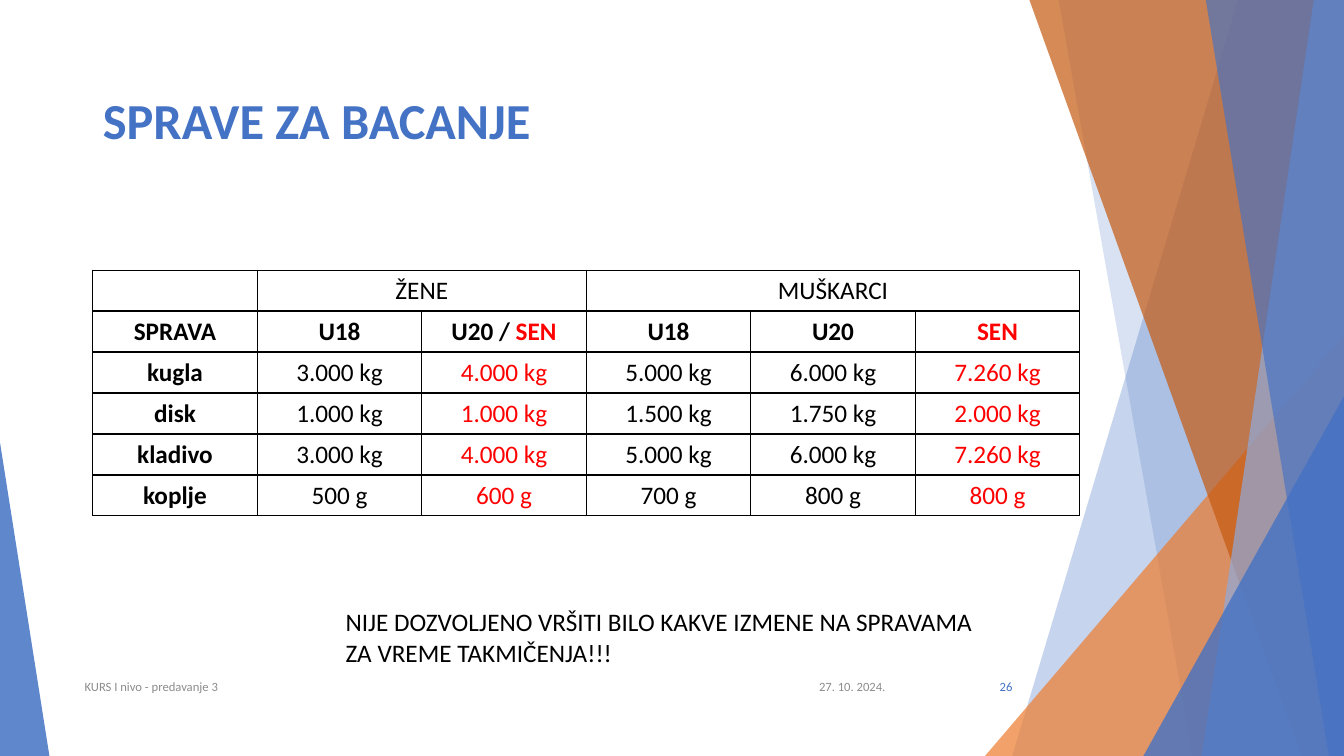
from lxml import etree
from pptx import Presentation
from pptx import util as u
from pptx.dml.color import RGBColor
from pptx.enum import shapes, text
from pptx.oxml.ns import qn

BLUE = RGBColor(0x44, 0x72, 0xC4)
LIGHT_BLUE = RGBColor(0x8F, 0xAA, 0xDC)
ORANGE = RGBColor(0xED, 0x7D, 0x31)
RUST = RGBColor(0xC5, 0x5A, 0x11)
BLACK = RGBColor(0, 0, 0)
RED = RGBColor(0xFF, 0, 0)
GREY = RGBColor(0x8C, 0x8C, 0x8C)
WHITE = RGBColor(0xFF, 0xFF, 0xFF)
WIDTH, HEIGHT = 13.33, 7.5

APPARATUS = [
    ["", "ŽENE", "", "MUŠKARCI", "", ""],
    ["SPRAVA", "U18", "U20 / SEN", "U18", "U20", "SEN"],
    ["kugla", "3.000 kg", "4.000 kg", "5.000 kg", "6.000 kg", "7.260 kg"],
    ["disk", "1.000 kg", "1.000 kg", "1.500 kg", "1.750 kg", "2.000 kg"],
    ["kladivo", "3.000 kg", "4.000 kg", "5.000 kg", "6.000 kg", "7.260 kg"],
    ["koplje", "500 g", "600 g", "700 g", "800 g", "800 g"],
]
SENIOR_COLUMNS = (2, 5)


def inches(*lengths):
    return [u.Inches(length) for length in lengths]


def add_span(para, words, size, color, bold=False):
    span = para.add_run()
    span.text = words
    for name, value in dict(name="Calibri", size=u.Pt(size), bold=bold).items():
        setattr(span.font, name, value)
    span.font.color.rgb = color


def paint(shape, color, opacity):
    shape.shadow.inherit = False
    shape.fill.solid()
    shape.fill.fore_color.rgb = color
    shape.line.fill.background()
    color_node = shape.fill._xPr.find(qn("a:solidFill"))[0]
    etree.SubElement(color_node, qn("a:alpha"), val=str(opacity * 1000))


def add_ray(page, start, end):
    ray = page.shapes.add_connector(shapes.MSO_CONNECTOR.STRAIGHT, *inches(*start, *end))
    ray.line.color.rgb = WHITE
    ray.line.width = u.Pt(0.75)
    etree.SubElement(ray._element.spPr, qn("a:effectLst"))


def add_band(page, top_x, bottom_x, color, opacity):
    """Band from a slanted left edge to the right side of the slide."""
    outline = page.shapes.build_freeform(*inches(top_x, 0))
    corners = [(WIDTH, 0), (WIDTH, HEIGHT), (bottom_x, HEIGHT)]
    outline.add_line_segments([inches(*corner) for corner in corners], close=True)
    paint(outline.convert_to_shape(), color, opacity)


def add_wedge(page, left, top, width, apex, color, opacity):
    """Triangle standing on the bottom of the slide."""
    wedge = page.shapes.add_shape(shapes.MSO_SHAPE.ISOSCELES_TRIANGLE,
                                  *inches(left, top, width, HEIGHT - top))
    wedge.adjustments[0] = apex
    paint(wedge, color, opacity)


def add_backdrop(page):
    add_ray(page, (10.25, 0), (11.58, HEIGHT))
    add_ray(page, (WIDTH, 4.03), (8.12, HEIGHT))
    add_band(page, 12.28, 10.04, BLUE, 30)
    add_band(page, 10.5, 11.83, BLUE, 20)
    add_wedge(page, 9.77, 3.33, 3.56, 1, ORANGE, 72)
    add_band(page, 10.21, 12.91, RUST, 70)
    add_band(page, 13.03, 11.92, LIGHT_BLUE, 70)
    add_band(page, 11.96, 13.18, BLUE, 65)
    add_wedge(page, 11.34, 3.93, 1.99, 1, BLUE, 80)
    add_wedge(page, 0, 4.39, 0.49, 0, BLUE, 85)


def add_title(page, box, words):
    title = page.shapes.title
    title.left, title.top, title.width, title.height = inches(*box)
    title.text_frame.vertical_anchor = text.MSO_ANCHOR.TOP
    para = title.text_frame.paragraphs[0]
    para.alignment = text.PP_ALIGN.LEFT
    add_span(para, words, 36, BLUE, True)
    # Bring the title in front of the backdrop
    page.shapes._spTree.append(title._element)


def add_borders(cell):
    props = cell._tc.get_or_add_tcPr()
    for side in "LRTB":
        edge = etree.SubElement(props, qn(f"a:ln{side}"), w=str(u.Pt(1)))
        fill = etree.SubElement(edge, qn("a:solidFill"))
        etree.SubElement(fill, qn("a:srgbClr"), val=str(BLACK))


def add_apparatus_table(page, box):
    rows, columns = len(APPARATUS), len(APPARATUS[0])
    table = page.shapes.add_table(rows, columns, *inches(*box)).table
    table.first_row = table.horz_banding = False
    for row, entries in enumerate(APPARATUS):
        for column, words in enumerate(entries):
            cell = table.cell(row, column)
            add_borders(cell)
            cell.fill.background()
            cell.vertical_anchor = text.MSO_ANCHOR.MIDDLE
            para = cell.text_frame.paragraphs[0]
            para.alignment = text.PP_ALIGN.CENTER
            if not words:
                continue
            bold = row == 1 or column == 0
            # Only the senior part of a mixed heading is red
            lead, slash, rest = words.rpartition(" / ")
            if slash:
                add_span(para, lead + slash, 18, BLACK, bold)
            senior = row > 0 and column in SENIOR_COLUMNS
            add_span(para, rest, 18, RED if senior else BLACK, bold)
    for first, last in ((1, 2), (3, 5)):
        table.cell(0, first).merge(table.cell(0, last))


def add_label(page, box, words, size, color, align=text.PP_ALIGN.LEFT,
              anchor=text.MSO_ANCHOR.MIDDLE):
    frame = page.shapes.add_textbox(*inches(*box)).text_frame
    frame.word_wrap = True
    frame.vertical_anchor = anchor
    para = frame.paragraphs[0]
    para.alignment = align
    add_span(para, words, size, color)


def add_footer(page, top, height):
    right = text.PP_ALIGN.RIGHT
    add_label(page, (7.88, top, 1, height), "27. 10. 2024.", 9, GREY, right)
    add_label(page, (0.74, top, 6.89, height), "KURS I nivo - predavanje 3", 9, GREY)
    add_label(page, (9.39, top, 0.75, height), "26", 9, BLUE, right)


def main():
    deck = Presentation()
    deck.slide_width, deck.slide_height = inches(WIDTH, HEIGHT)
    page = deck.slides.add_slide(deck.slide_layouts[5])
    add_backdrop(page)
    add_title(page, (0.92, 0.83, 11.5, 1.45), "SPRAVE ZA BACANJE")
    add_apparatus_table(page, (0.92, 2.68, 9.79, 2.44))
    add_label(page, (3.33, 5.97, 6.67, 0.71),
              "NIJE DOZVOLJENO VRŠITI BILO KAKVE IZMENE NA SPRAVAMA ZA VREME TAKMIČENJA!!!",
              18, BLACK, anchor=text.MSO_ANCHOR.TOP)
    add_footer(page, 6.61, 0.4)
    deck.save("out.pptx")


if __name__ == "__main__":
    main()
